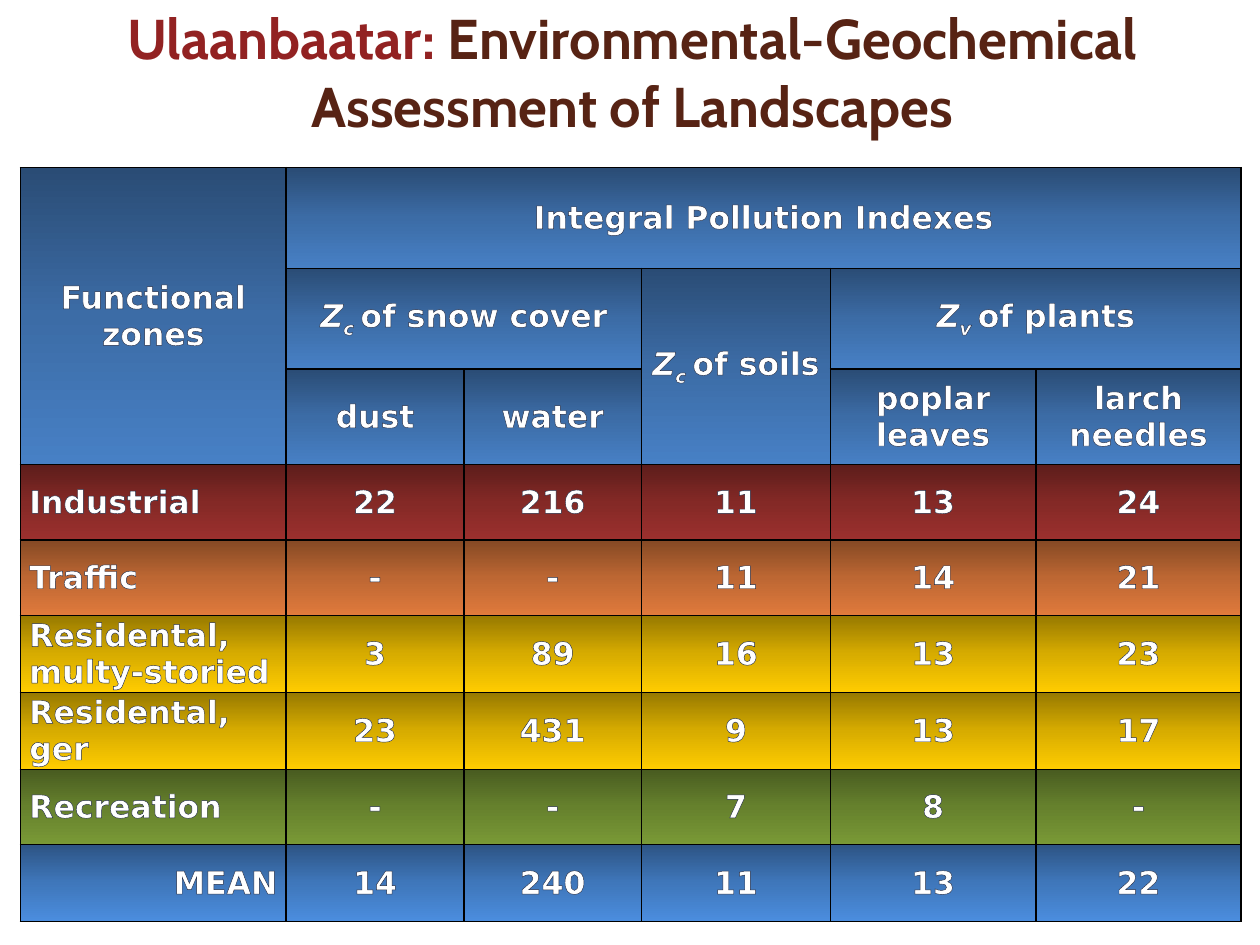
from dataclasses import dataclass
from itertools import product

from lxml.etree import SubElement
from pptx import Presentation
from pptx.dml.color import RGBColor
from pptx.enum.text import MSO_ANCHOR, PP_ALIGN
from pptx.oxml import parse_xml
from pptx.oxml.ns import nsdecls, qn
from pptx.util import Cm, Pt


@dataclass(frozen=True)
class Theme:
    title_font: str = "Cabin"
    table_font: str = "DejaVu Sans"
    title_size: int = 32
    table_size: int = 18
    city: str = "922222"
    city_outline: str = "621717"
    title: str = "572314"
    cell_text: str = "FFFFFF"
    cell_outline: str = "242D46"
    border: str = "000000"
    # Gradients from top to bottom: start, middle, end
    header: tuple[str, ...] = ("2A4C75", "3C6CA6", "4780C5")
    industrial: tuple[str, ...] = ("5D1D1B", "842926", "9C302E")
    traffic: tuple[str, ...] = ("854924", "BD6733", "E07A3C")
    residential: tuple[str, ...] = ("977900", "D7AC00", "FFCC00")
    recreation: tuple[str, ...] = ("485B20", "66812D", "799936")
    mean: tuple[str, ...] = ("2D5484", "3F77BB", "4B8DDE")


THEME = Theme()


@dataclass(frozen=True)
class Span:
    text: str
    italic: bool = False
    subscript: bool = False


@dataclass(frozen=True)
class Heading:
    row: int
    column: int
    lines: list[list[Span]]
    rows: int = 1
    columns: int = 1


@dataclass(frozen=True)
class Zone:
    name: str
    values: str
    gradient: tuple[str, ...]
    align: PP_ALIGN = PP_ALIGN.LEFT


def plain(text: str) -> list[list[Span]]:
    """Turn each line of the text into a paragraph of one span."""
    return [[Span(line)] for line in text.split("\n")]


def index(letter: str, subject: str) -> list[list[Span]]:
    """Write a pollution index: Z with a subscript, then its subject."""
    return [[Span("Z", italic=True), Span(f"{letter} ", italic=True, subscript=True), Span(subject)]]


COLUMN_WIDTHS = [5.36, 3.58, 3.58, 3.81, 4.14, 4.14]
ROW_HEIGHTS = [2.03, 2.03, 1.93, 1.52, 1.52, 1.55, 1.55, 1.52, 1.55]

HEADINGS = [
    Heading(0, 0, plain("Functional zones"), rows=3),
    Heading(0, 1, plain("Integral Pollution Indexes"), columns=5),
    Heading(1, 1, index("c", "of snow cover"), columns=2),
    Heading(1, 3, index("c", "of soils"), rows=2),
    Heading(1, 4, index("v", "of plants"), columns=2),
    Heading(2, 1, plain("dust")),
    Heading(2, 2, plain("water")),
    Heading(2, 4, plain("poplar\nleaves")),
    Heading(2, 5, plain("larch\nneedles")),
]
HEADER_ROWS = 3

ZONES = [
    Zone("Industrial", "22 216 11 13 24", THEME.industrial),
    Zone("Traffic", "- - 11 14 21", THEME.traffic),
    Zone("Residental,\nmulty-storied", "3 89 16 13 23", THEME.residential),
    Zone("Residental,\nger", "23 431 9 13 17", THEME.residential),
    Zone("Recreation", "- - 7 8 -", THEME.recreation),
    Zone("MEAN", "14 240 11 13 22", THEME.mean, PP_ALIGN.RIGHT),
]


def line_xml(tag: str, color: str, width: float):
    return parse_xml(
        f'<a:{tag} {nsdecls("a")} w="{Pt(width)}"><a:solidFill>'
        f'<a:srgbClr val="{color}"/></a:solidFill></a:{tag}>'
    )


def add_run(para, text: str, font: str, size: int, color: str,
            outline: str | None = None, outline_width: float = 0.5):
    run = para.add_run()
    run.text = text
    run.font.name = font
    run.font.size = Pt(size)
    run.font.bold = True
    run.font.color.rgb = RGBColor.from_string(color)
    if outline:
        run._r.get_or_add_rPr().insert(0, line_xml("ln", outline, outline_width))
    return run


def paint_cell(cell, gradient: tuple[str, ...]) -> None:
    """Give the cell its four borders and a gradient running down."""
    properties = cell._tc.get_or_add_tcPr()
    for side in ("lnL", "lnR", "lnT", "lnB"):
        properties.append(line_xml(side, THEME.border, 1))
    fill = SubElement(properties, qn("a:gradFill"), rotWithShape="1")
    stops = SubElement(fill, qn("a:gsLst"))
    for position, color in zip((0, 50000, 100000), gradient):
        stop = SubElement(stops, qn("a:gs"), pos=str(position))
        SubElement(stop, qn("a:srgbClr"), val=color)
    SubElement(fill, qn("a:lin"), ang="5400000", scaled="0")


def write_cell(cell, lines: list[list[Span]], align: PP_ALIGN = PP_ALIGN.CENTER) -> None:
    cell.vertical_anchor = MSO_ANCHOR.MIDDLE
    cell.margin_left = cell.margin_right = Cm(0.18)
    cell.margin_top = cell.margin_bottom = 0
    frame = cell.text_frame
    for number, spans in enumerate(lines):
        para = frame.add_paragraph() if number else frame.paragraphs[0]
        para.alignment = align
        for span in spans:
            run = add_run(para, span.text, THEME.table_font, THEME.table_size,
                          THEME.cell_text, THEME.cell_outline)
            run.font.italic = span.italic
            if span.subscript:
                run._r.get_or_add_rPr().set("baseline", "-25000")


def add_title(page) -> None:
    box = page.shapes.add_textbox(Cm(0.05), Cm(0.56), Cm(25.4), Cm(1.75))
    frame = box.text_frame
    frame.word_wrap = True
    frame.vertical_anchor = MSO_ANCHOR.MIDDLE
    para = frame.paragraphs[0]
    para.alignment = PP_ALIGN.CENTER
    add_run(para, "Ulaanbaatar: ", THEME.title_font, THEME.title_size,
            THEME.city, THEME.city_outline, 0.75)
    add_run(para, "Environmental-Geochemical Assessment of Landscapes",
            THEME.title_font, THEME.title_size, THEME.title)


def add_pollution_table(page) -> None:
    table = page.shapes.add_table(
        len(ROW_HEIGHTS), len(COLUMN_WIDTHS), Cm(0.41), Cm(3.38),
        Cm(sum(COLUMN_WIDTHS)), Cm(sum(ROW_HEIGHTS)),
    ).table
    table.first_row = table.horz_banding = False
    for column, width in zip(table.columns, COLUMN_WIDTHS):
        column.width = Cm(width)
    for row, height in zip(table.rows, ROW_HEIGHTS):
        row.height = Cm(height)

    gradients = [THEME.header] * HEADER_ROWS + [zone.gradient for zone in ZONES]
    for row, column in product(range(len(ROW_HEIGHTS)), range(len(COLUMN_WIDTHS))):
        paint_cell(table.cell(row, column), gradients[row])

    for heading in HEADINGS:
        cell = table.cell(heading.row, heading.column)
        if heading.rows * heading.columns > 1:
            cell.merge(table.cell(heading.row + heading.rows - 1,
                                  heading.column + heading.columns - 1))
        write_cell(cell, heading.lines)

    for row, zone in enumerate(ZONES, HEADER_ROWS):
        write_cell(table.cell(row, 0), plain(zone.name), zone.align)
        for column, value in enumerate(zone.values.split(), 1):
            write_cell(table.cell(row, column), plain(value))


def main() -> None:
    deck = Presentation()
    deck.slide_width, deck.slide_height = Cm(25.4), Cm(19.05)
    page = deck.slides.add_slide(deck.slide_layouts[6])
    add_pollution_table(page)
    add_title(page)
    deck.save("out.pptx")


if __name__ == "__main__":
    main()
